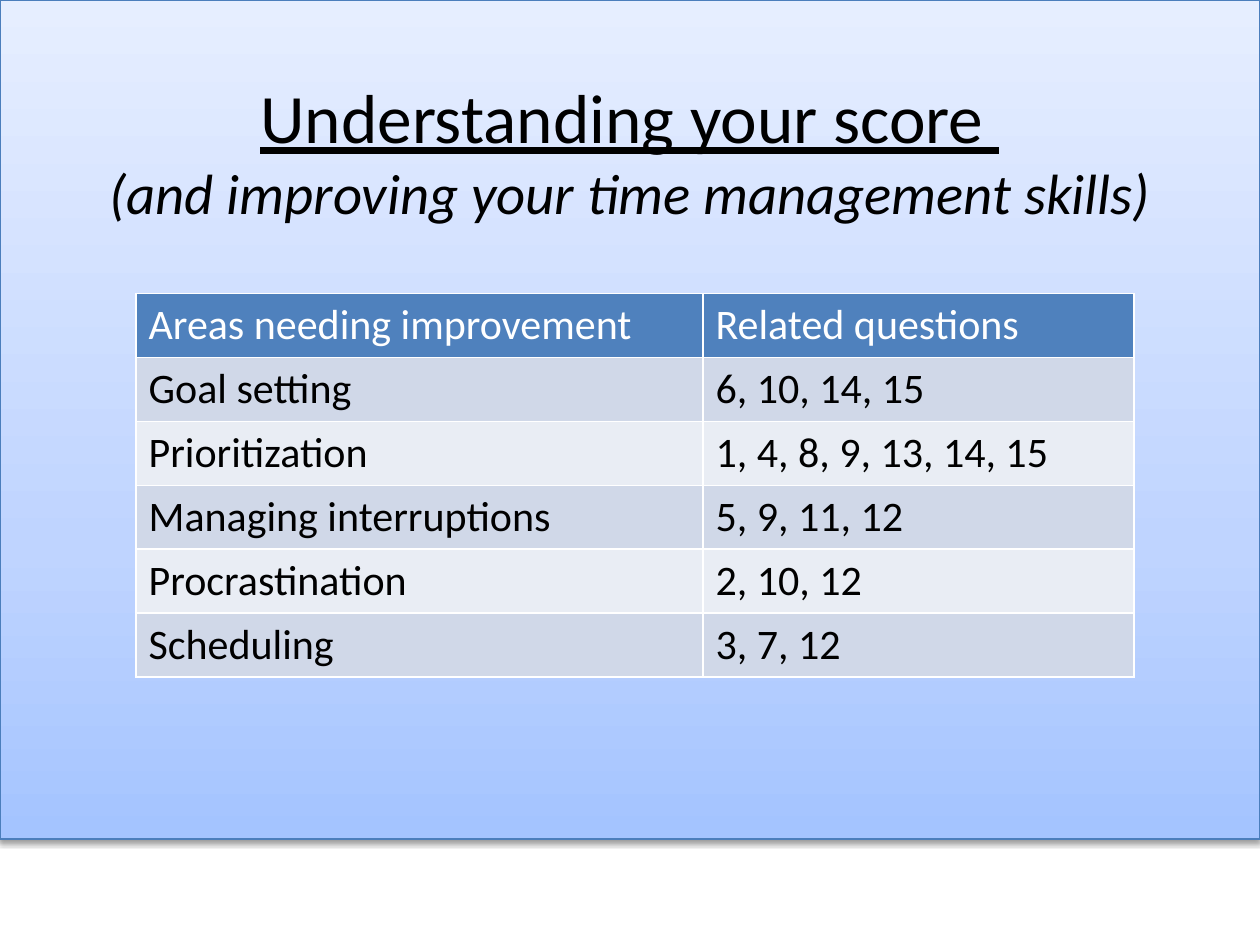
import pptx
import pptx.dml.color
import pptx.enum.shapes
import pptx.enum.text
import pptx.oxml
import pptx.oxml.ns
import pptx.util
from pptx.util import Inches

# Content
TITLE = [
    ("Understanding your score ", 39.6, {"underline": True}),
    ("(and improving your time management skills)", 32.4, {"italic": True}),
]
ROWS = [
    ("Areas needing improvement", "Related questions"),
    ("Goal setting", "6, 10, 14, 15"),
    ("Prioritization", "1, 4, 8, 9, 13, 14, 15"),
    ("Managing interruptions", "5, 9, 11, 12"),
    ("Procrastination", "2, 10, 12"),
    ("Scheduling", "3, 7, 12"),
]
COLUMN_WIDTHS = [4.5, 3.42]
ROW_HEIGHT = 0.41
HEADER_FILL, BAND_FILLS = "4F81BD", ["D0D8E8", "E9EDF4"]
GRADIENT = [(0, "A4C4FF"), (35, "BFD4FF"), (100, "E6EEFF")]
PANEL_HEIGHT = 6.66
NAMESPACE = pptx.oxml.ns.nsdecls("a")


def color(value):
    return pptx.dml.color.RGBColor.from_string(value)


def add_run(para, text, size, value, **style):
    span = para.add_run()
    span.text = text
    span.font.name = "Calibri"
    span.font.size = pptx.util.Pt(size)
    span.font.color.rgb = color(value)
    for name, setting in style.items():
        setattr(span.font, name, setting)


def set_line(shape, value, width):
    shape.line.color.rgb = color(value)
    shape.line.width = pptx.util.Pt(width)


def add_shadow(shape):
    shape._element.spPr.append(pptx.oxml.parse_xml(
        f'<a:effectLst {NAMESPACE}><a:outerShdw blurRad="39370" dist="20320" '
        'dir="5400000" rotWithShape="0"><a:srgbClr val="000000">'
        '<a:alpha val="38000"/></a:srgbClr></a:outerShdw></a:effectLst>'))


deck = pptx.Presentation()
deck.slide_width, deck.slide_height = Inches(10), Inches(7.5)
page = deck.slides.add_slide(deck.slide_layouts[5])
title = page.shapes.title

# Footer rule and gradient panel, both behind the title
rule = page.shapes.add_connector(
    pptx.enum.shapes.MSO_CONNECTOR.STRAIGHT,
    Inches(0), Inches(PANEL_HEIGHT), Inches(10), Inches(PANEL_HEIGHT))
set_line(rule, "D9D9D9", 1)

panel = page.shapes.add_shape(
    pptx.enum.shapes.MSO_SHAPE.RECTANGLE,
    Inches(0), Inches(0), Inches(10), Inches(PANEL_HEIGHT))
stops = "".join(
    f'<a:gs pos="{position * 1000}"><a:srgbClr val="{value}"/></a:gs>'
    for position, value in GRADIENT)
panel._element.spPr.append(pptx.oxml.parse_xml(
    f'<a:gradFill {NAMESPACE} rotWithShape="1"><a:gsLst>{stops}</a:gsLst>'
    '<a:lin ang="16200000" scaled="0"/></a:gradFill>'))
set_line(panel, "4B7EBC", 0.75)

for shape in (rule, panel):
    add_shadow(shape)
    title._element.addprevious(shape._element)

# Title
title.left, title.top = Inches(0.5), Inches(0.3)
title.width, title.height = Inches(9), Inches(1.78)
title.text_frame.vertical_anchor = pptx.enum.text.MSO_ANCHOR.MIDDLE
heading = title.text_frame.paragraphs[0]
heading.alignment = pptx.enum.text.PP_ALIGN.CENTER
for index, (text, size, style) in enumerate(TITLE):
    if index:
        heading.add_line_break()
    add_run(heading, text, size, "000000", **style)

# Score table
table = page.shapes.add_table(
    len(ROWS), len(COLUMN_WIDTHS), Inches(1.08), Inches(2.33),
    Inches(sum(COLUMN_WIDTHS)), Inches(ROW_HEIGHT * len(ROWS))).table
for column, width in zip(table.columns, COLUMN_WIDTHS):
    column.width = Inches(width)
for row_index, values in enumerate(ROWS):
    table.rows[row_index].height = Inches(ROW_HEIGHT)
    is_header = row_index == 0
    fill = HEADER_FILL if is_header else BAND_FILLS[(row_index - 1) % 2]
    for column_index, text in enumerate(values):
        cell = table.cell(row_index, column_index)
        cell.fill.solid()
        cell.fill.fore_color.rgb = color(fill)
        add_run(cell.text_frame.paragraphs[0], text, 24,
                "FFFFFF" if is_header else "000000", bold=False)

deck.save("out.pptx")
